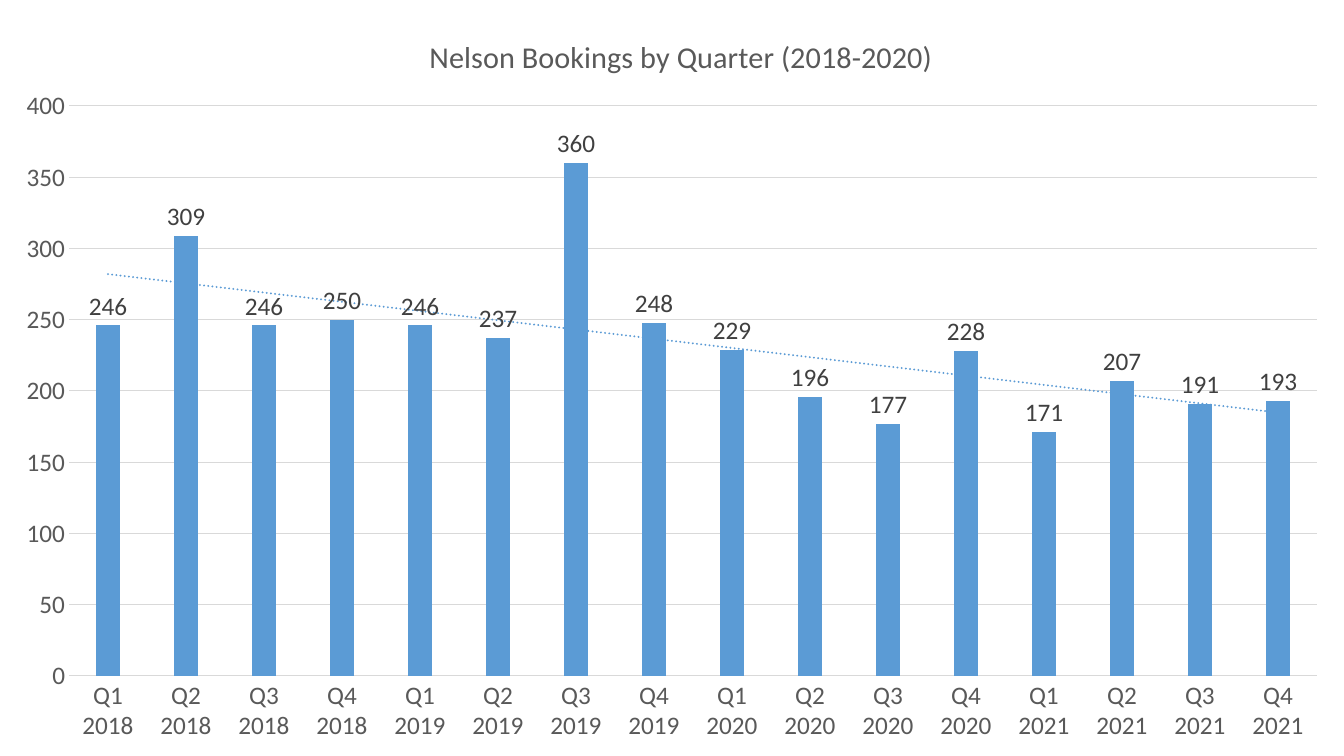
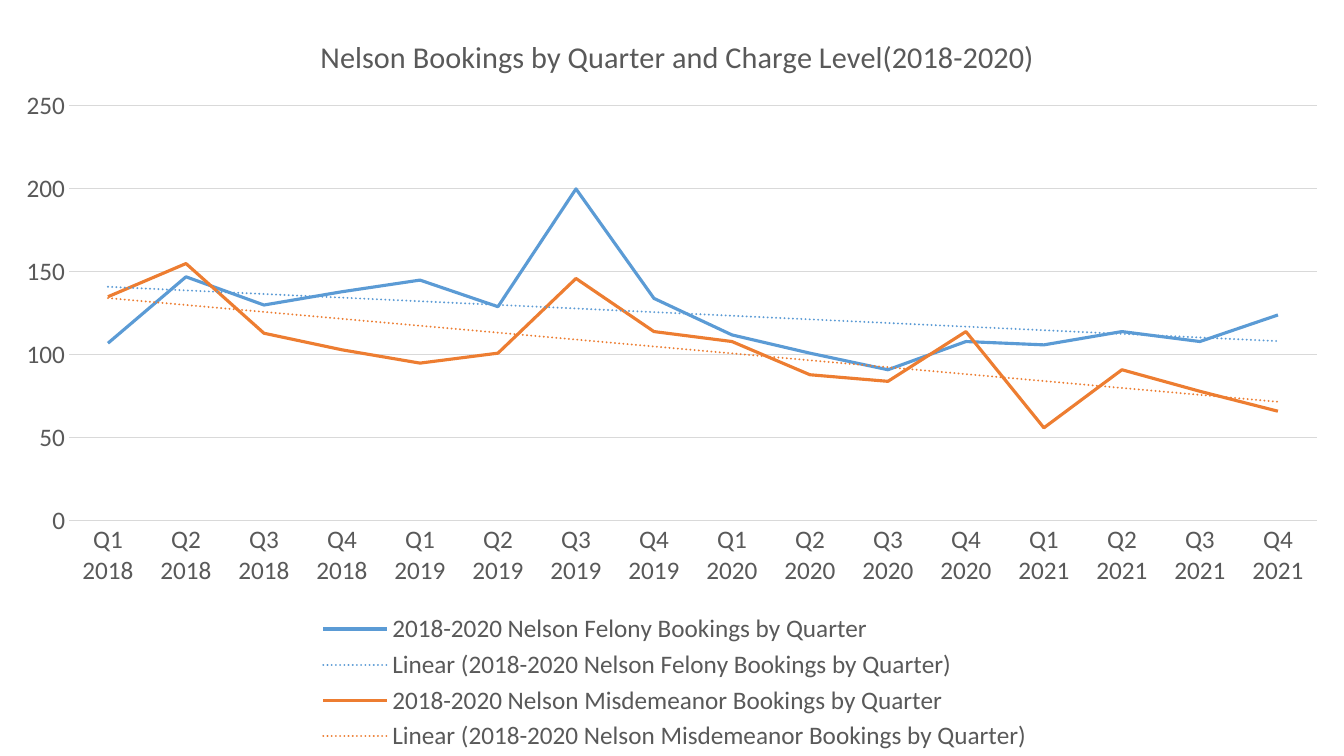
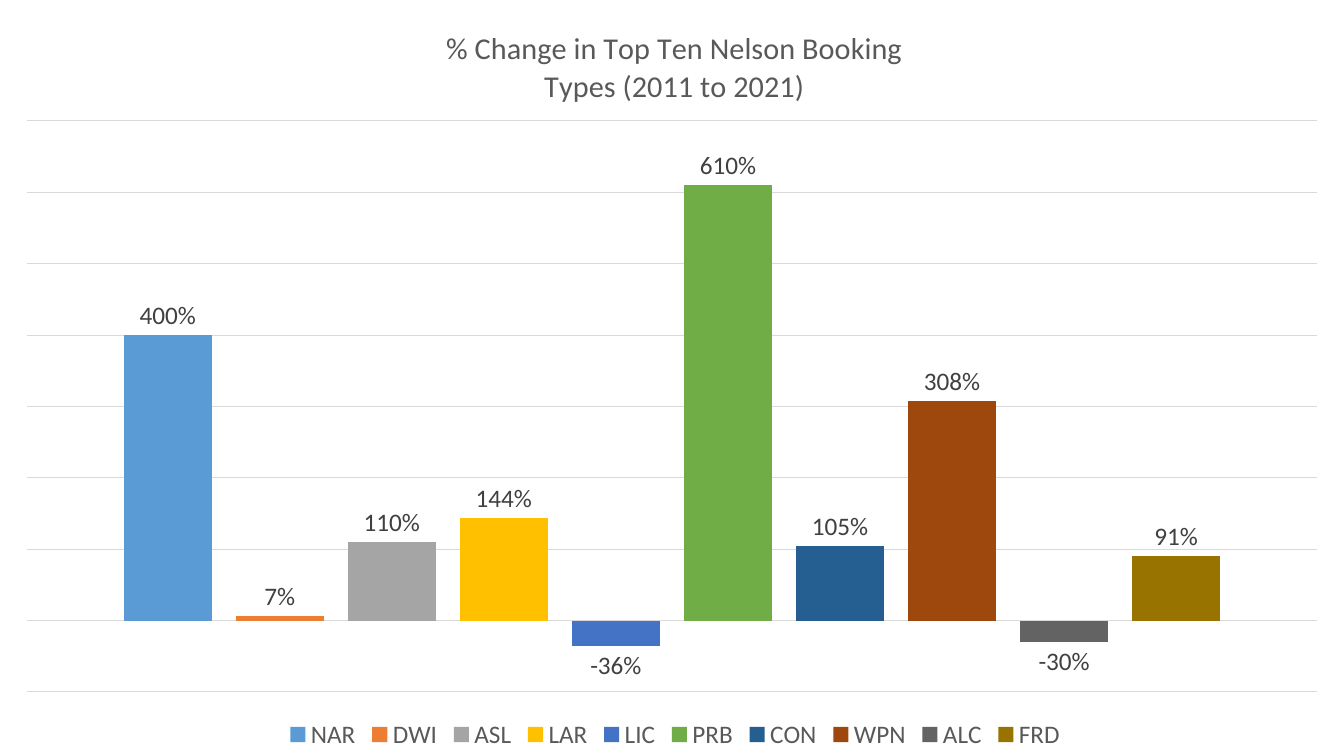
from lxml import etree
from pptx import Presentation
from pptx.chart.data import CategoryChartData
from pptx.dml.color import RGBColor
from pptx.enum.chart import XL_CHART_TYPE, XL_LABEL_POSITION, XL_LEGEND_POSITION, XL_TICK_MARK
from pptx.enum.dml import MSO_LINE
from pptx.oxml import parse_xml
from pptx.oxml.ns import nsdecls, qn
from pptx.util import Pt

COLUMNS, LINES = XL_CHART_TYPE.COLUMN_CLUSTERED, XL_CHART_TYPE.LINE
OUTSIDE = XL_LABEL_POSITION.OUTSIDE_END
BOTTOM = XL_LEGEND_POSITION.BOTTOM
NO_TICK = XL_TICK_MARK.NONE
SOLID = MSO_LINE.SOLID

# Shared style
WIDTH, HEIGHT = 1344, 756
SCALE = 12192000 / WIDTH
FONT = "Calibri"
TEXT_SIZE, TITLE_SIZE = Pt(18), Pt(21.6)
GRAY = RGBColor(0x59, 0x59, 0x59)
DARK = RGBColor(0x40, 0x40, 0x40)
GRID = RGBColor(0xD9, 0xD9, 0xD9)
BLUE = RGBColor(0x5B, 0x9B, 0xD5)
ORANGE = RGBColor(0xED, 0x7D, 0x31)
SILVER = RGBColor(0xA5, 0xA5, 0xA5)
GOLD = RGBColor(0xFF, 0xC0, 0x00)
ROYAL = RGBColor(0x44, 0x72, 0xC4)
GREEN = RGBColor(0x70, 0xAD, 0x47)
NAVY = RGBColor(0x25, 0x5E, 0x91)
BROWN = RGBColor(0x9E, 0x48, 0x0E)
SLATE = RGBColor(0x63, 0x63, 0x63)
OLIVE = RGBColor(0x99, 0x73, 0x00)

# Chart data
QUARTERS = [f"Q{q} {year}" for year in range(2018, 2022) for q in range(1, 5)]
BOOKINGS = [("Series 1", [246, 309, 246, 250, 246, 237, 360, 248,
                          229, 196, 177, 228, 171, 207, 191, 193], BLUE)]
CHARGE_LEVELS = [
    ("2018-2020 Nelson Felony Bookings by Quarter",
     [107, 147, 130, 138, 145, 129, 200, 134,
      112, 101, 91, 108, 106, 114, 108, 124], BLUE),
    ("2018-2020 Nelson Misdemeanor Bookings by Quarter",
     [135, 155, 113, 103, 95, 101, 146, 114,
      108, 88, 84, 114, 56, 91, 78, 66], ORANGE),
]
CHANGES = [
    ("NAR", [4], BLUE), ("DWI", [0.07], ORANGE), ("ASL", [1.1], SILVER),
    ("LAR", [1.44], GOLD), ("LIC", [-0.36], ROYAL), ("PRB", [6.1], GREEN),
    ("CON", [1.05], NAVY), ("WPN", [3.08], BROWN), ("ALC", [-0.3], SLATE),
    ("FRD", [0.91], OLIVE),
]


def px(n):
    return round(n * SCALE)


def set_font(font, color, size=TEXT_SIZE):
    font.name, font.size, font.bold = FONT, size, False
    font.color.rgb = color


def set_line(line, color, width):
    line.color.rgb = color
    line.width = Pt(width)


def set_layout(chart, tag, left, top, width=None, height=None):
    """Place a chart part; lengths in px become fractions of the chart."""
    part = chart.element.find(".//" + qn(tag))
    layout = part.find(qn("c:layout"))
    if layout is None:
        layout = etree.Element(qn("c:layout"))
        part.insert(0, layout)
    for child in list(layout):
        layout.remove(child)
    manual = etree.SubElement(layout, qn("c:manualLayout"))
    items = [("xMode", "edge"), ("yMode", "edge"),
             ("x", left / WIDTH), ("y", top / HEIGHT)]
    if width:
        items.insert(0, ("layoutTarget", "inner"))
        items += [("w", width / WIDTH), ("h", height / HEIGHT)]
    for name, value in items:
        etree.SubElement(manual, qn("c:" + name)).set("val", str(value))


def add_trend(series, color):
    trend = parse_xml(
        f'<c:trendline {nsdecls("c", "a")}><c:spPr><a:ln w="19050" cap="rnd">'
        f'<a:solidFill><a:srgbClr val="{color}"/></a:solidFill>'
        '<a:prstDash val="sysDot"/></a:ln></c:spPr>'
        '<c:trendlineType val="linear"/><c:dispRSqr val="0"/>'
        '<c:dispEq val="0"/></c:trendline>')
    series._element.find(qn("c:cat")).addprevious(trend)


def add_title(chart, lines, at):
    tf = chart.chart_title.text_frame
    for i, text in enumerate(lines):
        p = tf.paragraphs[0] if i == 0 else tf.add_paragraph()
        p.text = text
        set_font(p.runs[0].font, GRAY, TITLE_SIZE)
    set_layout(chart, "c:title", *at)


def format_axes(chart, limits, visible):
    for axis in (chart.category_axis, chart.value_axis):
        axis.visible = visible
        axis.major_tick_mark = axis.minor_tick_mark = NO_TICK
        set_font(axis.tick_labels.font, GRAY)
    set_line(chart.category_axis.format.line, GRID, 0.75)
    values = chart.value_axis
    values.minimum_scale, values.maximum_scale, values.major_unit = limits
    values.format.line.fill.background()
    values.has_major_gridlines = True
    set_line(values.major_gridlines.format.line, GRID, 0.75)


def add_chart_slide(prs, kind, title, title_at, plot_box, cats, rows, limits,
                    legend_at=None, axes=True, trend=True, fmt="General"):
    """One slide filled by one chart."""
    s = prs.slides.add_slide(prs.slide_layouts[6])
    data = CategoryChartData(number_format=fmt)
    data.categories = cats
    for name, values, _ in rows:
        data.add_series(name, values)
    chart = s.shapes.add_chart(kind, 0, 0, px(WIDTH), px(HEIGHT), data).chart
    chart.font.name, chart.font.size = FONT, TEXT_SIZE
    add_title(chart, title, title_at)
    format_axes(chart, limits, axes)
    set_layout(chart, "c:plotArea", *plot_box)

    # Columns carry labels, lines do not
    plot = chart.plots[0]
    plot.vary_by_categories = False
    if kind == COLUMNS:
        plot.gap_width, plot.overlap = 219, -27
        plot.has_data_labels = True
        labels = plot.data_labels
        labels.show_value, labels.position = True, OUTSIDE
        labels.number_format, labels.number_format_is_linked = fmt, False
        set_font(labels.font, DARK)

    for series, (_, _, color) in zip(plot.series, rows):
        if kind == COLUMNS:
            series.invert_if_negative = False
            series.format.fill.solid()
            series.format.fill.fore_color.rgb = color
        else:
            series.smooth = False
            set_line(series.format.line, color, 2.25)
            series.format.line.dash_style = SOLID
        if trend:
            add_trend(series, color)

    chart.has_legend = legend_at is not None
    if legend_at:
        chart.legend.position = BOTTOM
        chart.legend.include_in_layout = False
        set_font(chart.legend.font, GRAY)
        set_layout(chart, "c:legend", *legend_at)


def main():
    prs = Presentation()
    prs.slide_width, prs.slide_height = px(WIDTH), px(HEIGHT)
    add_chart_slide(prs, COLUMNS, ["Nelson Bookings by Quarter (2018-2020)"],
                    (424, 30), (69, 106, 1248, 570), QUARTERS, BOOKINGS,
                    (0, 400, 50))
    add_chart_slide(prs, LINES,
                    ["Nelson Bookings by Quarter and Charge Level(2018-2020)"],
                    (315, 30), (69, 106, 1248, 415), QUARTERS, CHARGE_LEVELS,
                    (0, 250, 50), legend_at=(315, 609))
    add_chart_slide(prs, COLUMNS,
                    ["% Change in Top Ten Nelson Booking",
                     "Types (2011 to 2021)"],
                    (443, 25), (27, 121, 1290, 571), ["1"], CHANGES,
                    (-1, 7, 1), legend_at=(282, 716), axes=False, trend=False,
                    fmt="0%")
    prs.save("out.pptx")


if __name__ == "__main__":
    main()
